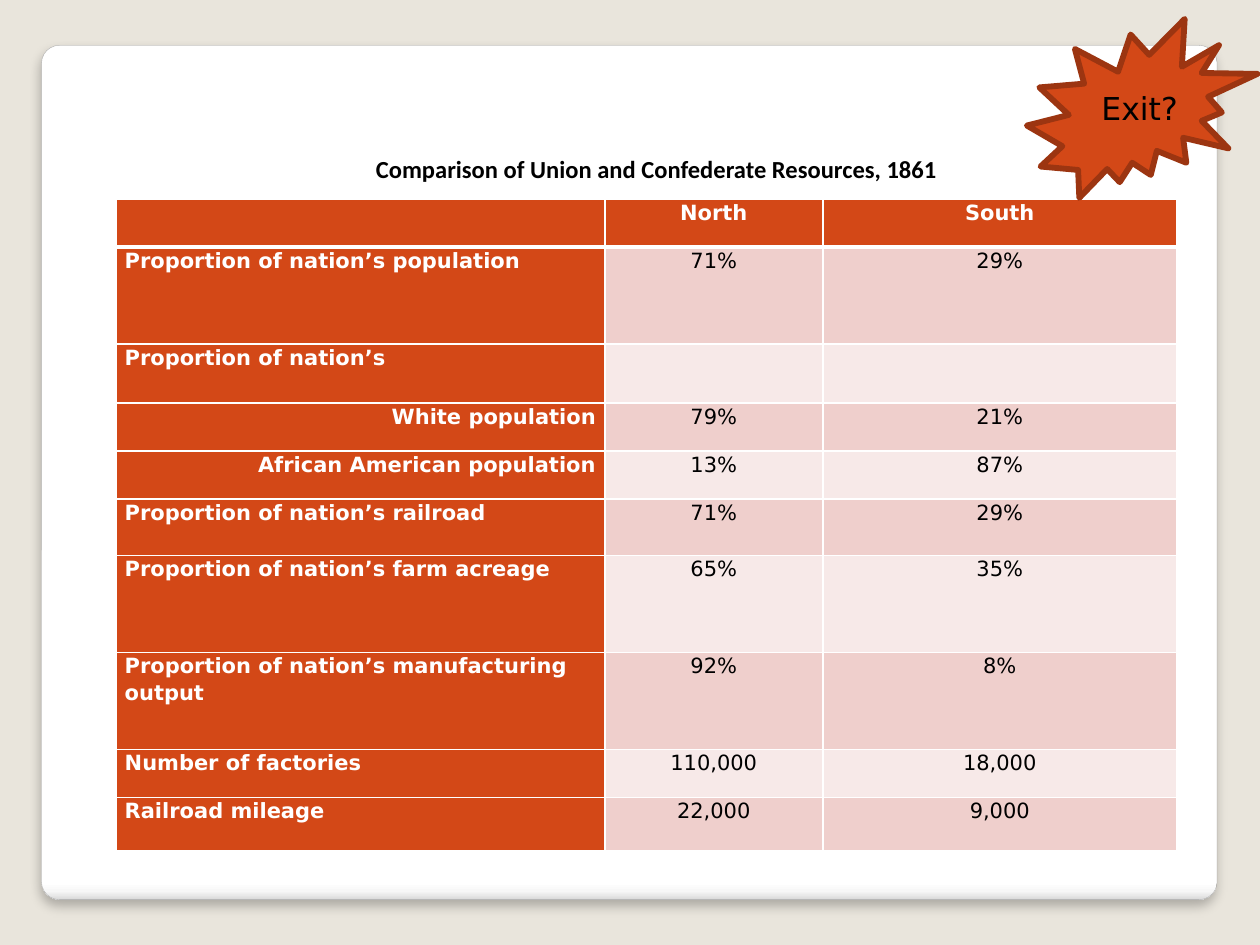
from lxml import etree
from pptx import Presentation
from pptx.dml.color import RGBColor
from pptx.enum.shapes import MSO_SHAPE as Preset
from pptx.enum.text import MSO_ANCHOR as Anchor, MSO_AUTO_SIZE as AutoSize, PP_ALIGN as Align
from pptx.oxml import parse_xml
from pptx.oxml.ns import qn
from pptx.util import Inches, Pt

DRAWING_NS = "http://schemas.openxmlformats.org/drawingml/2006/main"
ORANGE, WHITE, BLACK = "D34817", "FFFFFF", "000000"
BANDS = ("EFCFCC", "F7E9E8")
CARD_STOPS = ((0, WHITE), (98, WHITE), (99, "F7F7F7"), (100, "DADADA"))
COLUMN_WIDTHS = (3.88, 1.73, 2.81)
ROW_HEIGHTS = (0.38, 0.77, 0.47, 0.38, 0.38, 0.45, 0.77, 0.77, 0.38, 0.42)
RESOURCES = (
    ("", "North", "South"),
    ("Proportion of nation’s population", "71%", "29%"),
    ("Proportion of nation’s", "", ""),
    ("White population", "79%", "21%"),
    ("African American population", "13%", "87%"),
    ("Proportion of nation’s railroad", "71%", "29%"),
    ("Proportion of nation’s farm acreage", "65%", "35%"),
    ("Proportion of nation’s manufacturing output", "92%", "8%"),
    ("Number of factories", "110,000", "18,000"),
    ("Railroad mileage", "22,000", "9,000"),
)
SUBGROUP_ROWS = (3, 4)


def rgb(color):
    """Turn a hex string into a colour."""
    return RGBColor.from_string(color)


def box(left, top, width, height):
    """Return a position and size in inches."""
    return [Inches(length) for length in (left, top, width, height)]


def paint(target, color):
    """Give a shape, cell or background a solid fill."""
    target.fill.solid()
    target.fill.fore_color.rgb = rgb(color)


def write(frame, text, size, font, color=BLACK, bold=False, align=Align.CENTER):
    """Write one formatted run in the first paragraph of a text frame."""
    paragraph = frame.paragraphs[0]
    paragraph.alignment = align
    run = paragraph.add_run()
    run.text = text
    run.font.size = Pt(size)
    run.font.name = font
    run.font.bold = bold
    run.font.color.rgb = rgb(color)
    return paragraph


def add_card(slide):
    """Add the rounded white card with its soft lower edge and shadow."""
    card = slide.shapes.add_shape(Preset.ROUNDED_RECTANGLE, *box(0.33, 0.36, 9.33, 6.78))
    card.adjustments[0] = 0.021
    card.line.color.rgb = rgb("A4A4A4")
    card.line.width = Pt(0.16)
    card.fill.gradient()
    card.fill.gradient_angle = 270
    stops = card.element.spPr.find(qn("a:gradFill")).find(qn("a:gsLst"))
    stops.clear()
    for position, color in CARD_STOPS:
        stop = etree.SubElement(stops, qn("a:gs"), pos=str(position * 1000))
        etree.SubElement(stop, qn("a:srgbClr"), val=color)
    card.element.spPr.append(parse_xml(
        f'<a:effectLst xmlns:a="{DRAWING_NS}">'
        f'<a:outerShdw blurRad="{Pt(6)}" dist="{Pt(4)}" dir="5400000" algn="t" rotWithShape="0">'
        f'<a:srgbClr val="{BLACK}"><a:alpha val="25000"/></a:srgbClr>'
        '</a:outerShdw></a:effectLst>'))


def set_borders(cell, row):
    """Draw white cell borders, thicker below the header row."""
    widths = {"L": 1, "R": 1, "T": 3 if row == 1 else 1, "B": 3 if row == 0 else 1}
    properties = cell._tc.get_or_add_tcPr()
    for index, (side, width) in enumerate(widths.items()):
        properties.insert(index, parse_xml(
            f'<a:ln{side} xmlns:a="{DRAWING_NS}" w="{Pt(width)}">'
            f'<a:solidFill><a:srgbClr val="{WHITE}"/></a:solidFill></a:ln{side}>'))


def fill_cell(cell, row, column, text):
    """Format one table cell and write its text."""
    is_heading = row == 0 or column == 0
    paint(cell, ORANGE if is_heading else BANDS[(row - 1) % 2])
    set_borders(cell, row)
    cell.margin_left = cell.margin_right = Inches(0.07)
    cell.margin_top = cell.margin_bottom = 0
    if not text:
        return
    align = Align.CENTER
    if column == 0:
        align = Align.RIGHT if row in SUBGROUP_ROWS else Align.LEFT
    paragraph = write(cell.text_frame, text, 12, "DejaVu Sans",
                      WHITE if is_heading else BLACK, is_heading, align)
    paragraph.line_spacing = 1.07


def add_resource_table(slide):
    """Add the table that compares North and South."""
    table = slide.shapes.add_table(len(RESOURCES), len(COLUMN_WIDTHS),
                                   *box(0.92, 1.58, 8.42, 5.17)).table
    for column, width in zip(table.columns, COLUMN_WIDTHS):
        column.width = Inches(width)
    for row, height in zip(table.rows, ROW_HEIGHTS):
        row.height = Inches(height)
    for row, texts in enumerate(RESOURCES):
        for column, text in enumerate(texts):
            fill_cell(table.cell(row, column), row, column, text)


def set_title(slide):
    """Place the title placeholder in front of the card."""
    title = slide.shapes.title
    title.left, title.top, title.width, title.height = box(0.67, 1.17, 9.08, 0.34)
    frame = title.text_frame
    frame.auto_size = AutoSize.NONE
    frame.vertical_anchor = Anchor.MIDDLE
    write(frame, "Comparison of Union and Confederate Resources, 1861", 14, "Calibri", bold=True)
    slide.shapes.element.append(title.element)


def add_exit_burst(slide):
    """Add the grouped starburst and its label."""
    group = slide.shapes.add_group_shape()
    burst = group.shapes.add_shape(Preset.EXPLOSION2, *box(8.15, 0.15, 1.83, 1.42))
    burst.shadow.inherit = False
    paint(burst, ORANGE)
    burst.line.color.rgb = rgb("9C3511")
    burst.line.width = Pt(3.35)
    label = group.shapes.add_textbox(*box(8.43, 0.66, 1.23, 0.4))
    label.text_frame.word_wrap = True
    write(label.text_frame, "Exit?", 18, "DejaVu Sans")


def main():
    """Build the slide and save it."""
    presentation = Presentation()
    presentation.slide_width, presentation.slide_height = Inches(10), Inches(7.5)
    slide = presentation.slides.add_slide(presentation.slide_layouts[5])
    paint(slide.background, "E9E5DC")
    add_card(slide)
    add_resource_table(slide)
    set_title(slide)
    add_exit_burst(slide)
    presentation.save("out.pptx")


if __name__ == "__main__":
    main()
